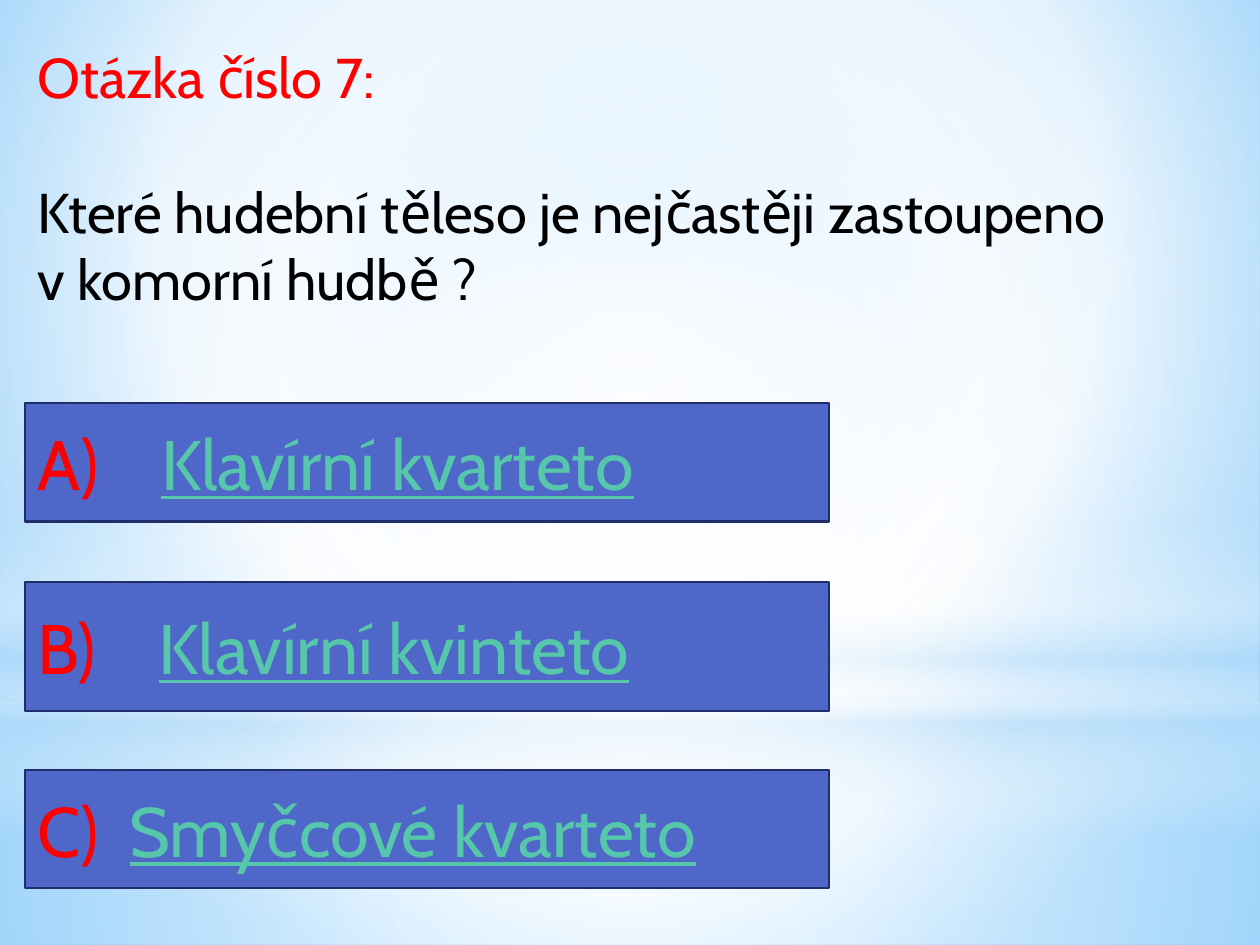
import pptx
import pptx.util
import pptx.dml.color
import pptx.enum.shapes
import pptx.enum.text
import pptx.oxml
import pptx.oxml.ns

RGBColor = pptx.dml.color.RGBColor
Shape = pptx.enum.shapes.MSO_SHAPE
Inches, Pt = pptx.util.Inches, pptx.util.Pt

RED = RGBColor(0xFF, 0x00, 0x00)
BLACK = RGBColor(0x00, 0x00, 0x00)
BLUE = RGBColor(0x4E, 0x67, 0xC8)
NAVY = RGBColor(0x1F, 0x2E, 0x69)
GREEN = RGBColor(0x56, 0xC7, 0xAA)
WHITE = RGBColor(0xFF, 0xFF, 0xFF)
PALE = RGBColor(0xB4, 0xDC, 0xFA)
SKY = RGBColor(0x9E, 0xD5, 0xFF)
DEEP_SKY = RGBColor(0x5B, 0xB9, 0xFF)

FONT = "Cabin"
WIDTH, HEIGHT = 10, 7.5
HORIZON = 5.58
LEFT, ANSWER_WIDTH = 0.2, 6.38

HEADING = "Otázka číslo 7:"
QUESTION = "Které hudební těleso je nejčastěji zastoupeno\vv komorní hudbě ?"
ANSWERS = [
    ("A)", "Klavírní kvarteto", 3.2, 0.94, 0.98),
    ("B)", "Klavírní kvinteto", 4.62, 1.02, 0.96),
    ("C)", "Smyčcové kvarteto", 6.11, 0.94, 0.73),
]

CENTRE = (50, 50, 50, 50)
SKY_STOPS = [(0, SKY, 100), (60, WHITE, 100), (100, DEEP_SKY, 100)]
SKY_FOCUS = (20, 10, 20, 60)
GLOWS = [
    (Shape.RECTANGLE, HORIZON, HEIGHT - HORIZON, CENTRE,
     [(0, WHITE, 91), (37, WHITE, 76), (100, PALE, 79)]),
    (Shape.RECTANGLE, 0, HORIZON, CENTRE,
     [(0, WHITE, 89), (48, WHITE, 62), (100, PALE, 79)]),
    (Shape.RECTANGLE, 4.12, 2.5, None,
     [(0, WHITE, 0), (29, WHITE, 30), (45, PALE, 40),
      (55, WHITE, 26), (65, PALE, 60), (100, WHITE, 0)]),
    (Shape.OVAL, 1.75, HORIZON, CENTRE,
     [(0, WHITE, 100), (56, WHITE, 0)]),
]


def set_gradient(owner, fill, stops, focus):
    fill.solid()
    solid = next(owner.element.iter(pptx.oxml.ns.qn("a:solidFill")))
    stop_xml = "".join(
        f'<a:gs pos="{position * 1000}"><a:srgbClr val="{color}">'
        f'<a:alpha val="{opacity * 1000}"/></a:srgbClr></a:gs>'
        for position, color, opacity in stops)
    if focus:
        sides = " ".join(f'{side}="{share * 1000}"' for side, share in zip("ltrb", focus))
        direction = f'<a:path path="circle"><a:fillToRect {sides}/></a:path>'
    else:
        direction = '<a:lin ang="5400000" scaled="0"/>'
    gradient = pptx.oxml.parse_xml(
        f'<a:gradFill {pptx.oxml.ns.nsdecls("a")} rotWithShape="1">'
        f'<a:gsLst>{stop_xml}</a:gsLst>{direction}</a:gradFill>')
    solid.getparent().replace(solid, gradient)


def add_shape(page, kind, left, top, width, height):
    shape = page.shapes.add_shape(
        kind, Inches(left), Inches(top), Inches(width), Inches(height))
    shape.shadow.inherit = False
    return shape


def style_font(font, size, color):
    font.name, font.size = FONT, Pt(size)
    font.color.rgb = color


def add_question(page):
    box = page.shapes.add_textbox(Inches(LEFT), Inches(0.29), Inches(9.45), Inches(2.26))
    frame = box.text_frame
    frame.word_wrap = True
    heading, question = frame.paragraphs[0], frame.add_paragraph()
    for para, text, color in ((heading, HEADING, RED), (question, QUESTION, BLACK)):
        para.text = text
        style_font(para.font, 32, color)
    question.space_before = Pt(38.4)


def add_answer(page, letter, answer, top, height, indent):
    box = add_shape(page, Shape.RECTANGLE, LEFT, top, ANSWER_WIDTH, height)
    box.fill.solid()
    box.fill.fore_color.rgb = BLUE
    box.line.color.rgb = NAVY
    box.line.width = Pt(1.25)
    box.text_frame.vertical_anchor = pptx.enum.text.MSO_ANCHOR.MIDDLE
    para = box.text_frame.paragraphs[0]
    para.alignment = pptx.enum.text.PP_ALIGN.LEFT
    style_font(para.font, 40, RED)
    properties = para.font._element.getparent()
    tabs = pptx.oxml.parse_xml(
        f'<a:tabLst {pptx.oxml.ns.nsdecls("a")}>'
        f'<a:tab pos="{Inches(indent)}" algn="l"/></a:tabLst>')
    properties.insert(0, tabs)
    for text, color, underlined in ((letter + "\t", RED, False), (answer, GREEN, True)):
        span = para.add_run()
        span.text = text
        style_font(span.font, 40, color)
        span.font.underline = underlined


def main():
    deck = pptx.Presentation()
    deck.slide_width, deck.slide_height = Inches(WIDTH), Inches(HEIGHT)
    page = deck.slides.add_slide(deck.slide_layouts[6])
    set_gradient(page, page.background.fill, SKY_STOPS, SKY_FOCUS)
    for kind, top, height, focus, stops in GLOWS:
        glow = add_shape(page, kind, 0, top, WIDTH, height)
        glow.line.fill.background()
        set_gradient(glow, glow.fill, stops, focus)
    add_question(page)
    for answer in ANSWERS:
        add_answer(page, *answer)
    deck.save("out.pptx")


if __name__ == "__main__":
    main()
